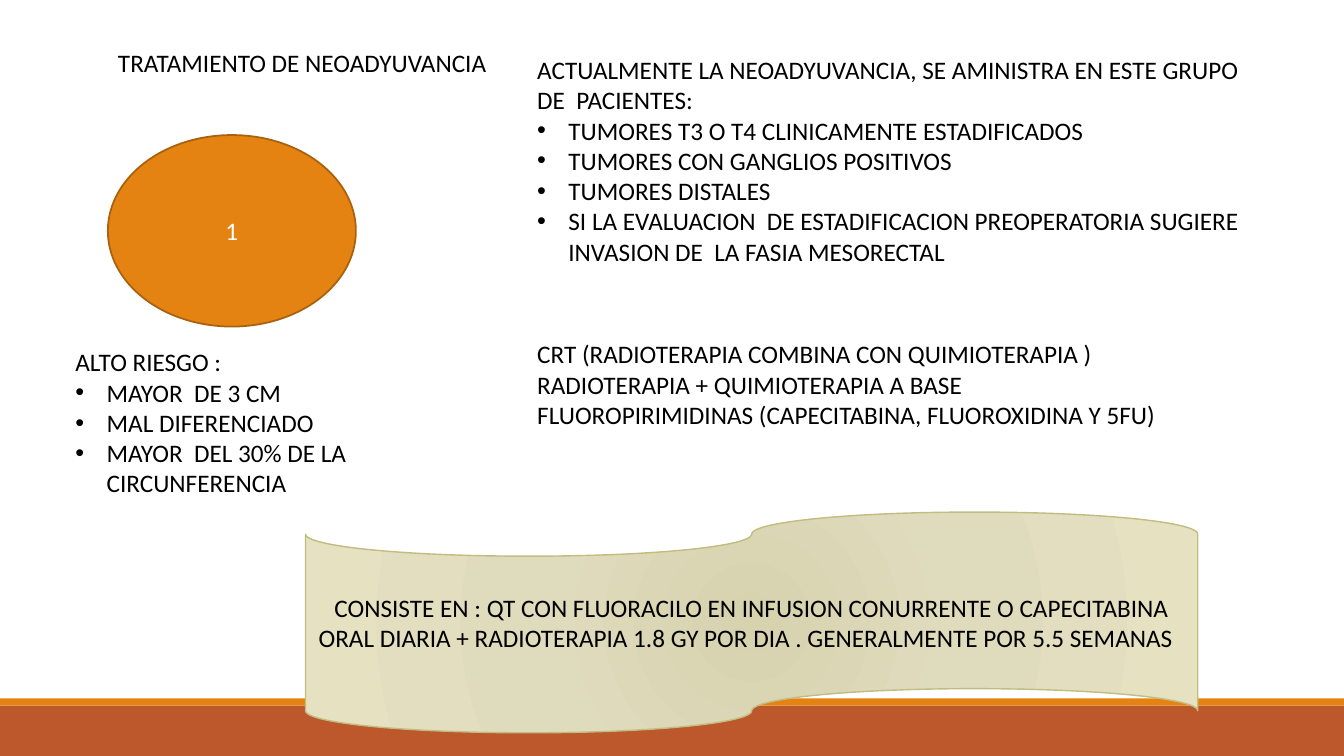
from lxml import etree
from pptx import Presentation
from pptx.dml.color import RGBColor
from pptx.enum import shapes, text
from pptx.oxml import ns
from pptx.util import Inches, Pt

BLACK = RGBColor(0x00, 0x00, 0x00)
WHITE = RGBColor(0xFF, 0xFF, 0xFF)
ORANGE = RGBColor(0xE4, 0x83, 0x12)
DARK_ORANGE = RGBColor(0xA9, 0x61, 0x0D)
RUST = RGBColor(0xBD, 0x58, 0x2C)
OLIVE = RGBColor(0xC2, 0xBC, 0x80)
TAPE_STOPS = [(0, "D7D3AF"), (45, "DFDBBD"), (100, "E5E1C1")]


def write_text(shape, lines, bullets_from=None, color=BLACK,
               align=text.PP_ALIGN.LEFT, anchor=text.MSO_ANCHOR.TOP,
               fit=text.MSO_AUTO_SIZE.SHAPE_TO_FIT_TEXT):
    """Fill a shape with paragraphs; those from index bullets_from get bullets."""
    frame = shape.text_frame
    frame.word_wrap = True
    frame.auto_size = fit
    frame.vertical_anchor = anchor
    for index, line in enumerate(lines):
        paragraph = frame.paragraphs[0] if index == 0 else frame.add_paragraph()
        paragraph.alignment = align
        run = paragraph.add_run()
        run.text = line
        run.font.name = "Calibri"
        run.font.size = Pt(18)
        run.font.color.rgb = color
        if bullets_from is not None and index >= bullets_from:
            properties = paragraph._p.get_or_add_pPr()
            properties.set("marL", str(Inches(0.31)))
            properties.set("indent", str(-Inches(0.31)))
            font = etree.SubElement(properties, ns.qn("a:buFont"))
            font.set("typeface", "Arial")
            etree.SubElement(properties, ns.qn("a:buChar")).set("char", "•")


def add_figure(kind, box, fill=None, line=None, width=1):
    """Add a preset shape without shadow, with an optional fill and outline."""
    shape = slide.shapes.add_shape(kind, *map(Inches, box))
    shape.shadow.inherit = False
    if fill is not None:
        shape.fill.solid()
        shape.fill.fore_color.rgb = fill
    if line is None:
        shape.line.fill.background()
    else:
        shape.line.color.rgb = line
        shape.line.width = Pt(width)
    return shape


presentation = Presentation()
presentation.slide_width = Inches(13.33)
presentation.slide_height = Inches(7.5)
slide = presentation.slides.add_slide(presentation.slide_layouts[5])

# Footer bands
add_figure(shapes.MSO_SHAPE.RECTANGLE, (0, 7, 13.33, 0.5), RUST)
add_figure(shapes.MSO_SHAPE.RECTANGLE, (0, 6.93, 13.33, 0.07), ORANGE)

# Title
title = slide.shapes.title
title.left, title.top, title.width, title.height = map(Inches, (1.07, 0.42, 7.21, 0.4))
write_text(title, ["TRATAMIENTO DE NEOADYUVANCIA"])

# Numbered ellipse
ellipse = add_figure(shapes.MSO_SHAPE.OVAL, (1.07, 1.34, 2.46, 1.9),
                     ORANGE, DARK_ORANGE, 1.25)
write_text(ellipse, ["1"], color=WHITE, align=text.PP_ALIGN.CENTER,
           anchor=text.MSO_ANCHOR.MIDDLE, fit=text.MSO_AUTO_SIZE.NONE)

# Punched tape with a radial gradient
tape = add_figure(shapes.MSO_SHAPE.FLOWCHART_PUNCHED_TAPE,
                  (3.03, 5.08, 8.85, 2.19), line=OLIVE)
tape.fill.gradient()
gradient = tape._element.spPr.find(ns.qn("a:gradFill"))
for child in list(gradient):
    gradient.remove(child)
stops = etree.SubElement(gradient, ns.qn("a:gsLst"))
for position, color in TAPE_STOPS:
    stop = etree.SubElement(stops, ns.qn("a:gs"), pos=str(position * 1000))
    etree.SubElement(stop, ns.qn("a:srgbClr"), val=color)
radial = etree.SubElement(gradient, ns.qn("a:path"))
radial.set("path", "circle")
etree.SubElement(radial, ns.qn("a:fillToRect"), {side: "100000" for side in "ltrb"})
write_text(tape, ["CONSISTE EN : QT CON FLUORACILO EN INFUSION CONURRENTE O CAPECITABINA "
                  "ORAL DIARIA + RADIOTERAPIA 1.8 GY POR DIA . GENERALMENTE POR 5.5 SEMANAS  "],
           align=text.PP_ALIGN.CENTER, anchor=text.MSO_ANCHOR.MIDDLE,
           fit=text.MSO_AUTO_SIZE.NONE)

# Text blocks: box, index of the first bullet, paragraphs
text_blocks = [
    ((5.23, 3.31, 6.49, 1.31), None, [
        "CRT (RADIOTERAPIA COMBINA CON QUIMIOTERAPIA )",
        "RADIOTERAPIA + QUIMIOTERAPIA A BASE  "
        "FLUOROPIRIMIDINAS (CAPECITABINA, FLUOROXIDINA Y 5FU)"]),
    ((5.23, 0.49, 7.37, 2.22), 1, [
        "ACTUALMENTE LA NEOADYUVANCIA, SE AMINISTRA EN ESTE GRUPO DE  PACIENTES:",
        "TUMORES T3 O T4 CLINICAMENTE ESTADIFICADOS",
        "TUMORES CON GANGLIOS POSITIVOS",
        "TUMORES DISTALES",
        "SI LA EVALUACION  DE ESTADIFICACION PREOPERATORIA "
        "SUGIERE INVASION DE  LA FASIA MESORECTAL"]),
    ((0.65, 3.39, 3.3, 1.92), 1, [
        "ALTO RIESGO :",
        "MAYOR  DE 3 CM",
        "MAL DIFERENCIADO",
        "MAYOR  DEL 30% DE LA CIRCUNFERENCIA"]),
]
for box, bullets_from, lines in text_blocks:
    write_text(slide.shapes.add_textbox(*map(Inches, box)), lines, bullets_from)

presentation.save("out.pptx")
